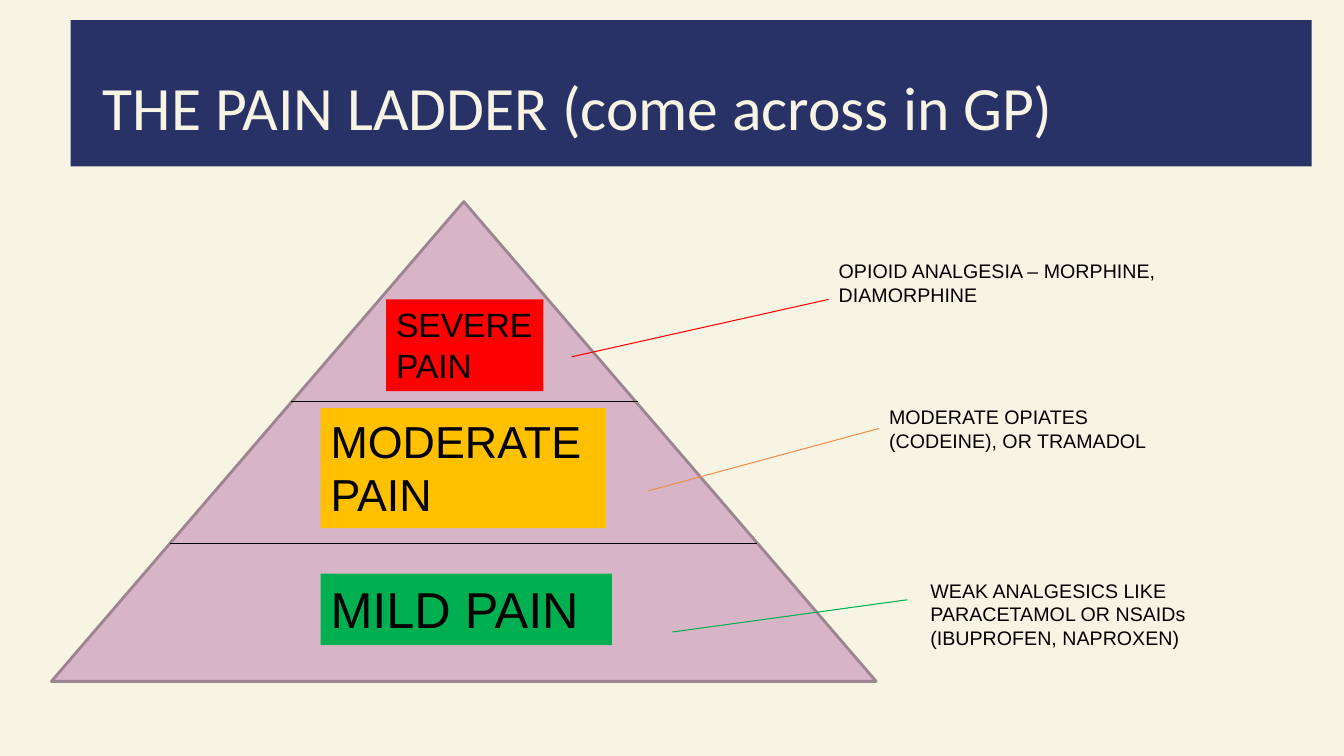
from lxml import etree
from pptx import Presentation
from pptx import util as u
from pptx.dml.color import RGBColor
from pptx.enum import shapes, text
from pptx.oxml.ns import qn

PX = 9144  # 100 px to the inch
COLORS = {
    "cream": "F8F4E4", "navy": "293267", "pink": "D7B5C6", "mauve": "9C8490",
    "black": "000000", "green": "00B050", "amber": "FFC000", "red": "FF0000",
    "orange": "ED8F4C",
}


def write(shape, words, size, font="Arial", color="black", anchor="TOP", spacing=1.0):
    frame = shape.text_frame
    frame.word_wrap = True
    frame.auto_size = text.MSO_AUTO_SIZE.NONE
    frame.vertical_anchor = text.MSO_ANCHOR[anchor]
    frame.text = words
    paragraph = frame.paragraphs[0]
    paragraph.alignment = text.PP_ALIGN.LEFT
    paragraph.line_spacing = spacing
    run_font = paragraph.runs[0].font
    run_font.size = u.Pt(size)
    run_font.name = font
    run_font.color.rgb = RGBColor.from_string(COLORS[color])


def add_filled(kind, box, color):
    shape = slide.shapes.add_shape(kind, *(n * PX for n in box))
    shape.shadow.inherit = False
    shape.fill.solid()
    shape.fill.fore_color.rgb = RGBColor.from_string(COLORS[color])
    shape.line.fill.background()
    return shape


presentation = Presentation()
presentation.slide_width = 1333 * PX
presentation.slide_height = 750 * PX
slide = presentation.slides.add_slide(presentation.slide_layouts[5])
slide.background.fill.solid()
slide.background.fill.fore_color.rgb = RGBColor.from_string(COLORS["cream"])

# Title on its banner
title = slide.shapes.title
title.left, title.top, title.width, title.height = (n * PX for n in (92, 37, 1150, 145))
write(title, "THE PAIN LADDER (come across in GP)", 44, font="Calibri",
      color="cream", anchor="MIDDLE", spacing=0.9)
banner = add_filled(shapes.MSO_SHAPE.RECTANGLE, (70, 20, 1231, 145), "navy")
title.element.addprevious(banner.element)

# Pyramid
pyramid = add_filled(shapes.MSO_SHAPE.ISOSCELES_TRIANGLE, (51, 200, 818, 476), "pink")
pyramid.line.color.rgb = RGBColor.from_string(COLORS["mauve"])
pyramid.line.width = u.Pt(2)

# Pain levels
levels = [
    ("MILD PAIN", (318, 569, 289, 71), "green", 36),
    ("MODERATE PAIN", (318, 405, 283, 119), "amber", 32),
    ("SEVERE PAIN", (383, 297, 156, 91), "red", 24),
]
for words, box, color, size in levels:
    write(add_filled(shapes.MSO_SHAPE.RECTANGLE, box, color), words, size)

# Treatments
treatments = [
    ("OPIOID ANALGESIA – MORPHINE, DIAMORPHINE", (822, 252, 339, 57)),
    ("MODERATE OPIATES (CODEINE), OR TRAMADOL", (872, 397, 307, 57)),
    ("WEAK ANALGESICS LIKE PARACETAMOL OR NSAIDs (IBUPROFEN, NAPROXEN)",
     (913, 569, 307, 81)),
]
for words, box in treatments:
    write(slide.shapes.add_textbox(*(n * PX for n in box)), words, 14)

# Pyramid dividers, then leaders to the treatments
lines = [
    ((289, 398, 633, 398), "black"),
    ((169, 539, 751, 539), "black"),
    ((567, 354, 822, 297), "red"),
    ((643, 487, 872, 425), "orange"),
    ((667, 627, 900, 595), "green"),
]
for ends, color in lines:
    line = slide.shapes.add_connector(shapes.MSO_CONNECTOR.STRAIGHT, *(n * PX for n in ends))
    line.line.color.rgb = RGBColor.from_string(COLORS[color])
    line.line.width = u.Pt(0.75)
    etree.SubElement(line.element.spPr, qn("a:effectLst"))

presentation.save("out.pptx")
